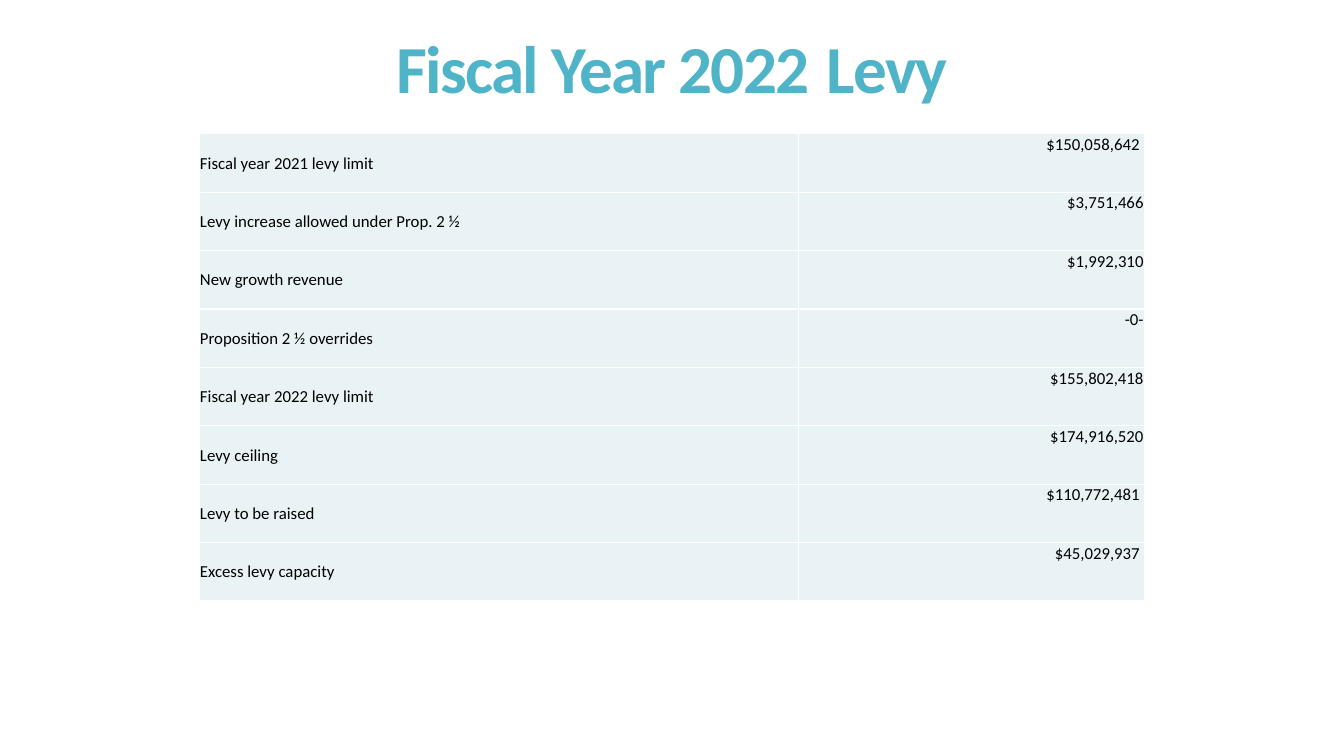
from lxml.etree import SubElement
from pptx import Presentation
from pptx.dml.color import RGBColor
from pptx.enum.text import MSO_ANCHOR, PP_ALIGN
from pptx.oxml.ns import qn
from pptx.util import Cm, Pt

TEAL = RGBColor(0x50, 0xB4, 0xC8)
PALE_BLUE = RGBColor(0xE9, 0xF2, 0xF5)
WHITE = RGBColor(0xFF, 0xFF, 0xFF)
BLACK = RGBColor(0x00, 0x00, 0x00)

TITLE_FONT = {"name": "Calibri", "bold": True}
CELL_FONT = {"name": "Calibri", "size": Pt(12), "bold": False}
CELL_MARGINS = {
    "margin_left": Cm(0.02),
    "margin_right": Cm(0.02),
    "margin_top": Cm(0.02),
    "margin_bottom": Cm(0),
}
COLUMN_FORMATS = [
    {"width": 15.11, "anchor": MSO_ANCHOR.MIDDLE, "align": PP_ALIGN.LEFT},
    {"width": 8.71, "anchor": MSO_ANCHOR.TOP, "align": PP_ALIGN.RIGHT},
]
TITLE_RUNS = [("Fiscal Year 2022", 48), (" ", 54), ("Levy", 48)]
LEVY_ROWS = [
    ("Fiscal year 2021 levy limit", "$150,058,642 "),
    ("Levy increase allowed under Prop. 2 ½", "$3,751,466"),
    ("New growth revenue", "$1,992,310"),
    ("Proposition 2 ½ overrides", "-0-"),
    ("Fiscal year 2022 levy limit", "$155,802,418"),
    ("Levy ceiling", "$174,916,520"),
    ("Levy to be raised", "$110,772,481 "),
    ("Excess levy capacity", "$45,029,937 "),
]


def set_attributes(target, values):
    for name, value in values.items():
        setattr(target, name, value)


def add_text(paragraph, text, font_values, color):
    run = paragraph.add_run()
    run.text = text
    set_attributes(run.font, font_values)
    run.font.color.rgb = color
    return run


def add_title(slide, left, top, width, height):
    shape = slide.shapes.add_textbox(Cm(left), Cm(top), Cm(width), Cm(height))
    frame = shape.text_frame
    set_attributes(frame, {"word_wrap": True, "vertical_anchor": MSO_ANCHOR.MIDDLE})
    paragraph = frame.paragraphs[0]
    set_attributes(paragraph, {"alignment": PP_ALIGN.CENTER, "line_spacing": 0.85})
    for text, size in TITLE_RUNS:
        run = add_text(paragraph, text, {**TITLE_FONT, "size": Pt(size)}, TEAL)
        run.font._element.set("spc", "-120")


def add_cell_borders(cell, color, width):
    properties = cell._tc.get_or_add_tcPr()
    for side in ("a:lnL", "a:lnR", "a:lnT", "a:lnB"):
        line = SubElement(properties, qn(side), w=str(width))
        fill = SubElement(line, qn("a:solidFill"))
        SubElement(fill, qn("a:srgbClr"), val=str(color))


def fill_cell(cell, text, column_format):
    set_attributes(cell, {**CELL_MARGINS, "vertical_anchor": column_format["anchor"]})
    add_cell_borders(cell, WHITE, Pt(1))
    cell.fill.solid()
    cell.fill.fore_color.rgb = PALE_BLUE
    paragraph = cell.text_frame.paragraphs[0]
    paragraph.alignment = column_format["align"]
    add_text(paragraph, text, CELL_FONT, BLACK)


def add_levy_table(slide, left, top, height):
    width = sum(column_format["width"] for column_format in COLUMN_FORMATS)
    table = slide.shapes.add_table(
        len(LEVY_ROWS), len(COLUMN_FORMATS), Cm(left), Cm(top), Cm(width), Cm(height)
    ).table
    set_attributes(table, {"first_row": False, "horz_banding": False})
    for column, column_format in zip(table.columns, COLUMN_FORMATS):
        column.width = Cm(column_format["width"])
    for row, texts in zip(table.rows, LEVY_ROWS):
        for cell, text, column_format in zip(row.cells, texts, COLUMN_FORMATS):
            fill_cell(cell, text, column_format)


def main():
    presentation = Presentation()
    presentation.slide_width = Cm(33.87)
    presentation.slide_height = Cm(19.05)
    slide = presentation.slides.add_slide(presentation.slide_layouts[6])
    add_title(slide, left=2.33, top=0.38, width=29.21, height=2.8)
    add_levy_table(slide, left=5.02, top=3.37, height=11.78)
    presentation.save("out.pptx")


if __name__ == "__main__":
    main()
